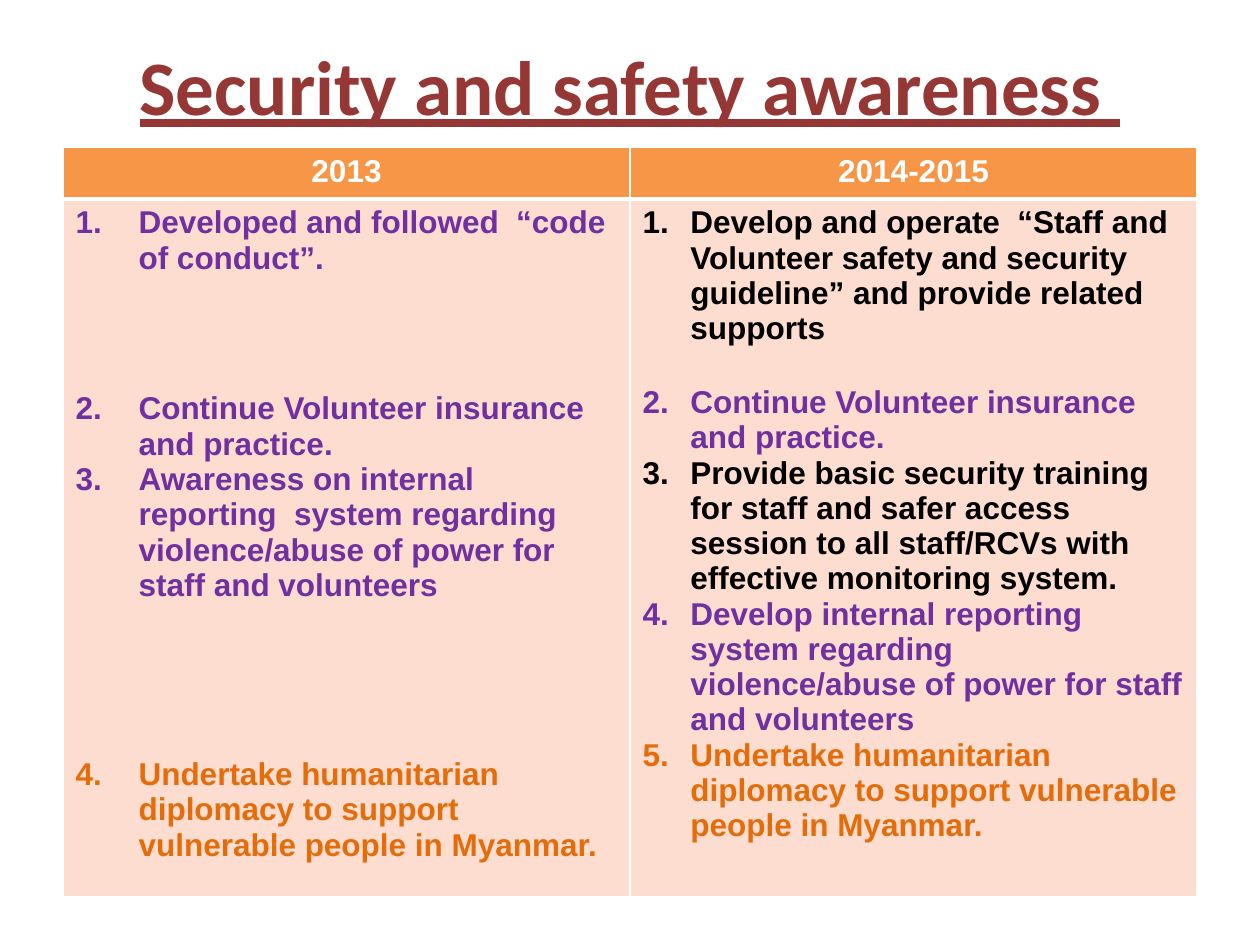
import pptx
import pptx.util
import pptx.dml.color
import pptx.enum.text
from lxml import etree
from pptx.oxml.ns import qn
from pptx.util import Inches, Pt

PURPLE, ORANGE, BLACK, WHITE = "7030A0", "E46C0A", "000000", "FFFFFF"
HEADER_FILL, BODY_FILL, TITLE_COLOR = "F79646", "FCDDCF", "953735"
CENTER = pptx.enum.text.PP_ALIGN.CENTER
LEFT = pptx.enum.text.PP_ALIGN.LEFT

TITLE = "Security and safety awareness "
INSURANCE = "Continue Volunteer insurance and practice."
DIPLOMACY = "Undertake humanitarian diplomacy to support vulnerable people in Myanmar."

COLUMNS = [
    {"heading": "2013", "indent": 0.5, "items": [
        ("Developed and followed  “code of conduct”.", PURPLE, 0),
        (INSURANCE, PURPLE, 66),
        ("Awareness on internal reporting  system regarding violence/abuse of power "
         "for staff and volunteers", PURPLE, 0),
        (DIPLOMACY, ORANGE, 88),
    ]},
    {"heading": "2014-2015", "indent": 0.38, "items": [
        ("Develop and operate  “Staff and Volunteer safety and security guideline” "
         "and provide related supports", BLACK, 0),
        (INSURANCE, PURPLE, 22),
        ("Provide basic security training for staff and safer access session to all "
         "staff/RCVs with effective monitoring system.", BLACK, 0),
        ("Develop internal reporting  system regarding violence/abuse of power "
         "for staff and volunteers", PURPLE, 0),
        (DIPLOMACY, ORANGE, 0),
    ]},
]
ROW_HEIGHTS = [0.41, 5.46]


def rgb(value):
    return pptx.dml.color.RGBColor.from_string(value)


def write(paragraph, text, color, align=LEFT, **font_format):
    paragraph.alignment = align
    run = paragraph.add_run()
    run.text = text
    for name, value in {"name": "Arial", "size": Pt(18), "bold": True, **font_format}.items():
        setattr(run.font, name, value)
    run.font.color.rgb = rgb(color)


def number(paragraph, indent):
    properties = paragraph._p.get_or_add_pPr()
    properties.set("marL", str(Inches(indent)))
    properties.set("indent", str(-Inches(indent)))
    etree.SubElement(properties, qn("a:buFont"), typeface="+mj-lt")
    etree.SubElement(properties, qn("a:buAutoNum"), type="arabicPeriod")


def style_cell(cell, fill, borders):
    properties = cell._tc.get_or_add_tcPr()
    for side, width in borders.items():
        line = etree.SubElement(properties, qn(f"a:ln{side}"), w=str(Pt(width)))
        solid = etree.SubElement(line, qn("a:solidFill"))
        etree.SubElement(solid, qn("a:srgbClr"), val=WHITE)
    cell.fill.solid()
    cell.fill.fore_color.rgb = rgb(fill)


def add_title(slide):
    box = slide.shapes.add_textbox(Inches(0.5), Inches(0.16), Inches(9), Inches(1.02))
    frame = box.text_frame
    frame.word_wrap = True
    frame.vertical_anchor = pptx.enum.text.MSO_ANCHOR.MIDDLE
    write(frame.paragraphs[0], TITLE, TITLE_COLOR, CENTER,
          name="Calibri", size=Pt(44), underline=True)


def add_comparison(slide):
    table = slide.shapes.add_table(len(ROW_HEIGHTS), len(COLUMNS), Inches(0.5), Inches(1.17),
                                   Inches(9), Inches(sum(ROW_HEIGHTS))).table
    for row, height in zip(table.rows, ROW_HEIGHTS):
        row.height = Inches(height)
    for index, column in enumerate(COLUMNS):
        header, body = table.cell(0, index), table.cell(1, index)
        style_cell(header, HEADER_FILL, {"L": 1, "R": 1, "T": 1, "B": 3})
        style_cell(body, BODY_FILL, {"L": 1, "R": 1, "T": 3, "B": 1})
        write(header.text_frame.paragraphs[0], column["heading"], WHITE, CENTER)
        frame = body.text_frame
        for position, (text, color, space) in enumerate(column["items"]):
            paragraph = frame.add_paragraph() if position else frame.paragraphs[0]
            if space:
                paragraph.space_before = Pt(space)
            number(paragraph, column["indent"])
            write(paragraph, text, color)


def main():
    presentation = pptx.Presentation()
    presentation.slide_width, presentation.slide_height = Inches(10), Inches(7.5)
    slide = presentation.slides.add_slide(presentation.slide_layouts[6])
    add_title(slide)
    add_comparison(slide)
    presentation.save("out.pptx")


if __name__ == "__main__":
    main()
